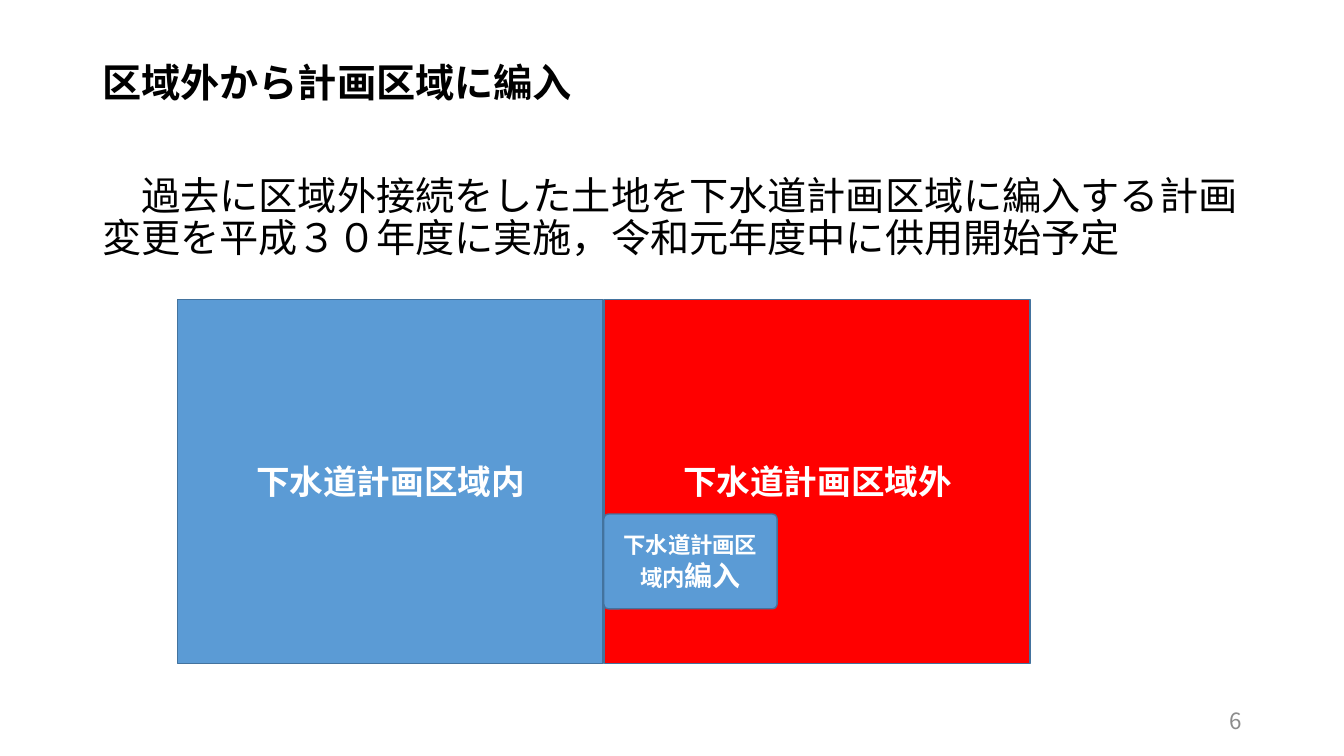
"""Build a slide on land moved into the sewer plan area."""
from pptx import Presentation
from pptx.dml.color import RGBColor
from pptx.enum.shapes import MSO_SHAPE
from pptx.enum.text import MSO_ANCHOR, PP_ALIGN
from pptx.util import Pt

RECT, ROUND = MSO_SHAPE.RECTANGLE, MSO_SHAPE.ROUNDED_RECTANGLE
TOP, MIDDLE = MSO_ANCHOR.TOP, MSO_ANCHOR.MIDDLE
LEFT, CENTER, RIGHT = PP_ALIGN.LEFT, PP_ALIGN.CENTER, PP_ALIGN.RIGHT
SANS, LATIN = "Noto Sans CJK JP", "Calibri"
COLORS = {"ink": "000000", "white": "FFFFFF", "gray": "8C8C8C",
          "blue": "5B9BD5", "red": "FF0000", "edge": "43739E"}


def color(name):
    return RGBColor.from_string(COLORS[name])


def write(para, text, size=28, font=SANS, ink="ink", bold=False,
          align=LEFT, before=0, line=1.0):
    para.alignment = align
    para.space_before = Pt(before)
    para.line_spacing = line
    run = para.add_run()
    run.text = text
    run.font.size = Pt(size)
    run.font.name = font
    run.font.bold = bold
    run.font.color.rgb = color(ink)


def add_box(slide, left, top, width, height, anchor=TOP):
    box = slide.shapes.add_textbox(Pt(left), Pt(top), Pt(width), Pt(height))
    frame = box.text_frame
    frame.word_wrap = True
    frame.vertical_anchor = anchor
    return frame


def add_area(slide, kind, left, top, width, height, fill, parts):
    area = slide.shapes.add_shape(kind, Pt(left), Pt(top), Pt(width), Pt(height))
    area.shadow.inherit = False
    area.fill.solid()
    area.fill.fore_color.rgb = color(fill)
    area.line.color.rgb = color("edge")
    area.line.width = Pt(1)
    frame = area.text_frame
    frame.word_wrap = True
    frame.vertical_anchor = MIDDLE
    for text, size in parts:
        write(frame.paragraphs[0], text, size=size, font=LATIN, ink="white",
              bold=True, align=CENTER)
    return area


def main():
    deck = Presentation()
    deck.slide_width, deck.slide_height = Pt(960), Pt(540)
    slide = deck.slides.add_slide(deck.slide_layouts[6])

    body = add_box(slide, 66, 41.75, 828, 243.5)
    write(body.paragraphs[0], "区域外から計画区域に編入", bold=True,
          before=10, line=0.9)
    write(body.add_paragraph(),
          "\u3000過去に区域外接続をした土地を下水道計画区域に編入する計画"
          "変更を平成３０年度に実施，令和元年度中に供用開始予定".replace("\u3000", "　"),
          before=50.7, line=0.9)

    areas = [("blue", "下水道計画区域内"), ("red", "下水道計画区域外")]
    for col, (fill, text) in enumerate(areas):
        add_area(slide, RECT, 126.9 + col * 305, 214, 304, 260, fill,
                 [(text, 24)])
    moved = add_area(slide, ROUND, 431.3, 367.2, 123.8, 67.7, "blue",
                     [("下水道計画区域内", 16), ("編入", 20)])
    moved.adjustments[0] = 0.05

    number = add_box(slide, 678, 500.5, 216, 28.75, anchor=MIDDLE)
    write(number.paragraphs[0], "6", size=16, ink="gray", align=RIGHT)
    deck.save("out.pptx")


if __name__ == "__main__":
    main()
